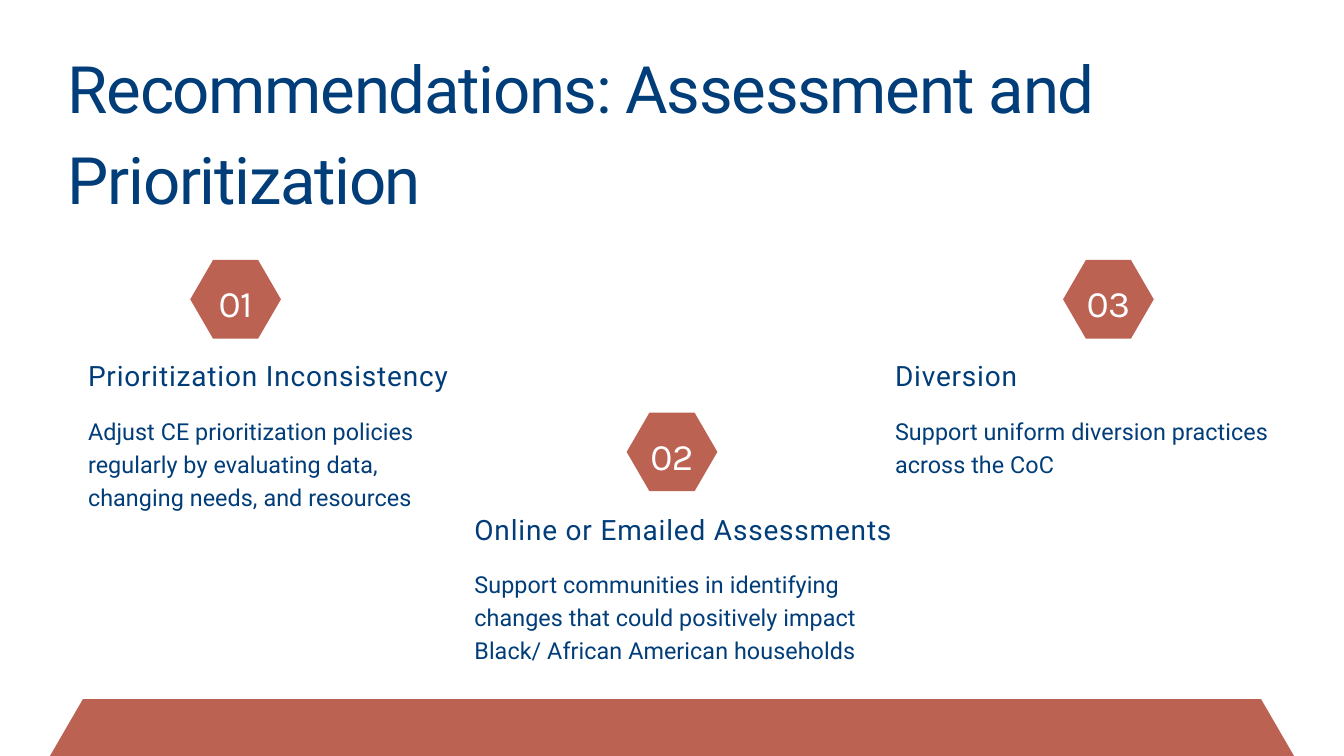
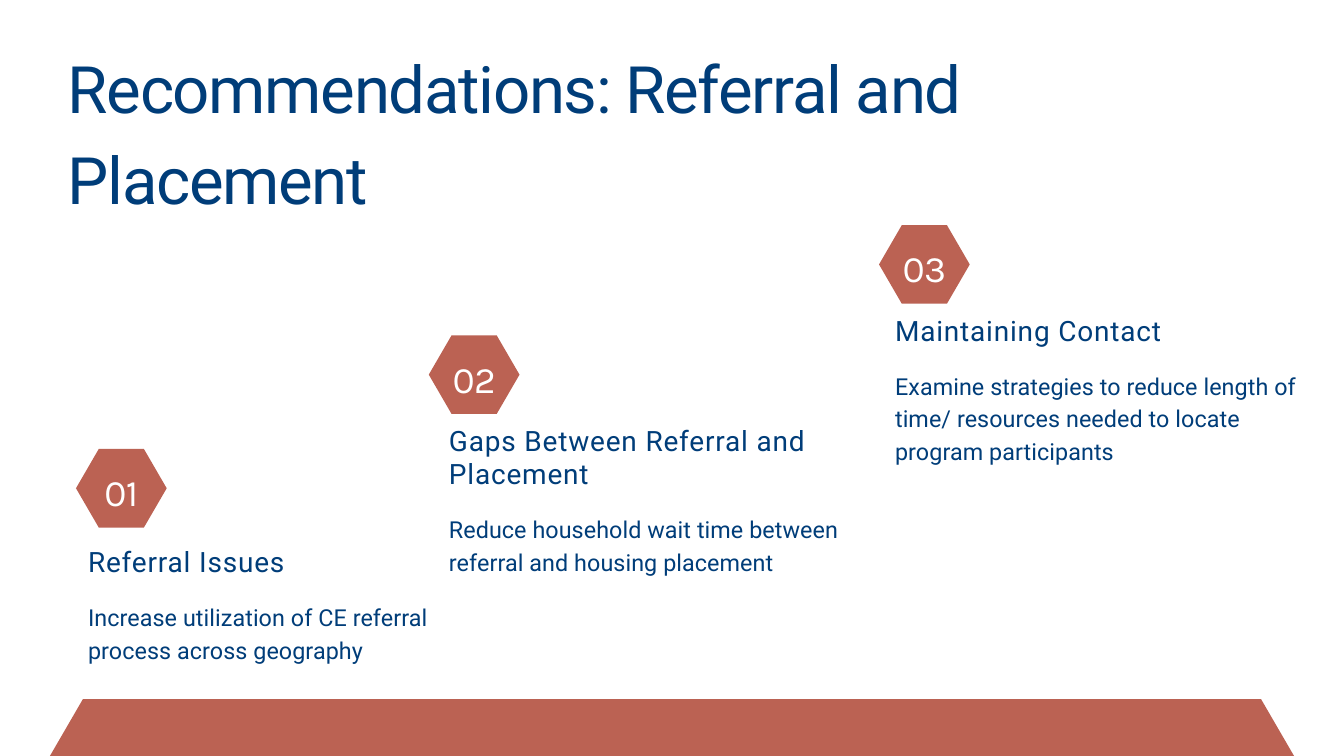
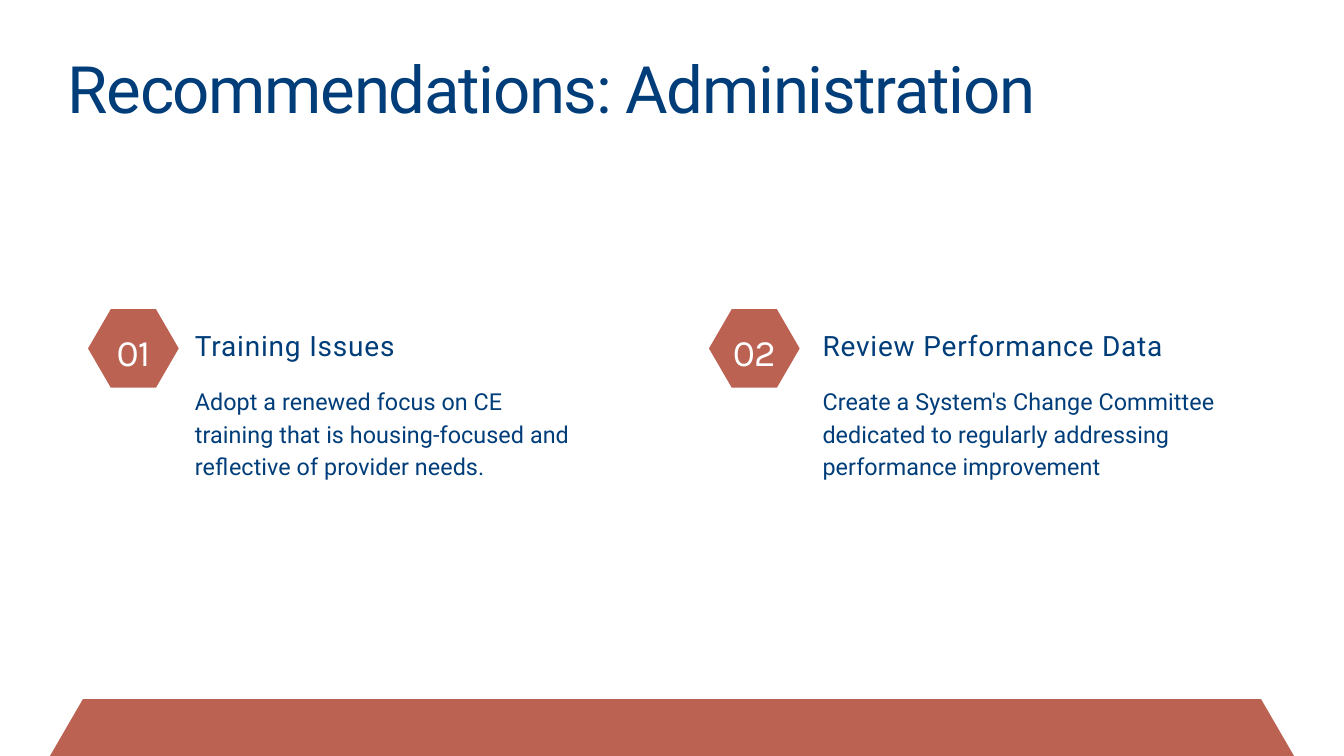
from dataclasses import dataclass

from pptx import Presentation
from pptx.dml.color import RGBColor
from pptx.enum.shapes import MSO_SHAPE
from pptx.enum.text import MSO_AUTO_SIZE, PP_ALIGN
from pptx.util import Pt

NAVY = RGBColor(0x00, 0x3D, 0x79)
CLAY = RGBColor(0xBB, 0x62, 0x53)
WHITE = RGBColor(0xFF, 0xFF, 0xFF)

HEXAGON_INSET = 0.29
BADGE_WIDTH, BADGE_HEIGHT = 97.2, 84.3
BODY_DROP = 21.6


@dataclass
class TextStyle:
    font: dict
    color: RGBColor
    tracking: int
    leading: float
    trim: float
    align: PP_ALIGN = PP_ALIGN.LEFT


TITLE = TextStyle({"name": "Roboto", "size": Pt(70)}, NAVY, -140, 98, 3.5)
HEADING = TextStyle({"name": "Roboto", "size": Pt(30)}, NAVY, 90, 36, -1.4)
BODY = TextStyle({"name": "Roboto", "size": Pt(25)}, NAVY, 10, 35, 3.3)
NUMBER = TextStyle({"name": "Karla", "size": Pt(40)}, WHITE, -80, 56, 4.2, PP_ALIGN.CENTER)


@dataclass
class Recommendation:
    badge: tuple
    text_position: tuple
    width: float
    heading: str
    body: str
    body_lines: int
    heading_lines: int = 1


SLIDES = [
    ("Recommendations: Assessment and Prioritization", 2, [
        Recommendation((203.8, 278.6), (94.3, 384.5), 414, "Prioritization Inconsistency",
                       "Adjust CE prioritization policies regularly by evaluating data, "
                       "changing needs, and resources", 3),
        Recommendation((671.4, 442.1), (508.3, 548.6), 478, "Online or Emailed Assessments",
                       "Support communities in identifying changes that could positively "
                       "impact Black/ African American households", 3),
        Recommendation((1139, 278.6), (959, 384.5), 457.2, "Diversion",
                       "Support uniform diversion practices across the CoC", 2),
    ]),
    ("Recommendations: Referral and Placement", 2, [
        Recommendation((81.4, 481), (94.3, 583.9), 414, "Referral Issues",
                       "Increase utilization of CE referral process across geography", 2),
        Recommendation((459.4, 359.3), (481, 453.6), 478, "Gaps Between Referral and Placement",
                       "Reduce household wait time between referral and housing placement",
                       2, heading_lines=2),
        Recommendation((941.8, 241.2), (959, 335.5), 457.2, "Maintaining Contact",
                       "Examine strategies to reduce length of time/ resources needed to "
                       "locate program participants", 3),
    ]),
    ("Recommendations: Administration", 1, [
        Recommendation((94.3, 331.2), (208.8, 352.1), 414, "Training Issues",
                       "Adopt a renewed focus on CE training that is housing-focused and "
                       "reflective of provider needs.", 3),
        Recommendation((759.6, 331.2), (881.3, 352.1), 478, "Review Performance Data",
                       "Create a System's Change Committee dedicated to regularly "
                       "addressing performance improvement", 3),
    ]),
]


def apply_format(target, values):
    for name, value in values.items():
        setattr(target, name, value)


def add_text(slide, text, style, left, top, width, lines=1):
    height = style.leading * lines - style.trim
    text_frame = slide.shapes.add_textbox(Pt(left), Pt(top), Pt(width), Pt(height)).text_frame
    apply_format(text_frame, {
        "word_wrap": True, "auto_size": MSO_AUTO_SIZE.SHAPE_TO_FIT_TEXT,
        "margin_left": 0, "margin_top": 0, "margin_right": 0, "margin_bottom": 0,
    })
    paragraph = text_frame.paragraphs[0]
    apply_format(paragraph, {"alignment": style.align, "line_spacing": Pt(style.leading)})
    run = paragraph.add_run()
    run.text = text
    apply_format(run.font, style.font)
    run.font.color.rgb = style.color
    run.font._element.set("spc", str(style.tracking))
    return height


def add_hexagon(slide, left, top, width, height):
    shape = slide.shapes.add_shape(MSO_SHAPE.HEXAGON, Pt(left), Pt(top), Pt(width), Pt(height))
    shape.adjustments[0] = HEXAGON_INSET
    shape.shadow.inherit = False
    shape.fill.solid()
    shape.fill.fore_color.rgb = CLAY
    shape.line.fill.background()


def add_badge(slide, number, left, top):
    add_hexagon(slide, left, top, BADGE_WIDTH, BADGE_HEIGHT)
    add_text(slide, f"{number:02}", NUMBER, left + 21.2, top + 13.9, 54.8)


def add_recommendation(slide, number, item):
    left, top = item.text_position
    height = add_text(slide, item.heading, HEADING, left, top, item.width, item.heading_lines)
    add_text(slide, item.body, BODY, left, top + height + BODY_DROP - 1.2, item.width,
             item.body_lines)
    add_badge(slide, number, *item.badge)


def add_footer(slide):
    add_hexagon(slide, 53.5, 749.2, 1333, 121.6)


def main():
    presentation = Presentation()
    apply_format(presentation, {"slide_width": Pt(1440), "slide_height": Pt(810)})
    for title, title_lines, recommendations in SLIDES:
        slide = presentation.slides.add_slide(presentation.slide_layouts[6])
        add_text(slide, title, TITLE, 72.7, 37.4, 1141.2, title_lines)
        for number, item in enumerate(recommendations, 1):
            add_recommendation(slide, number, item)
        add_footer(slide)
    presentation.save("out.pptx")


if __name__ == "__main__":
    main()
